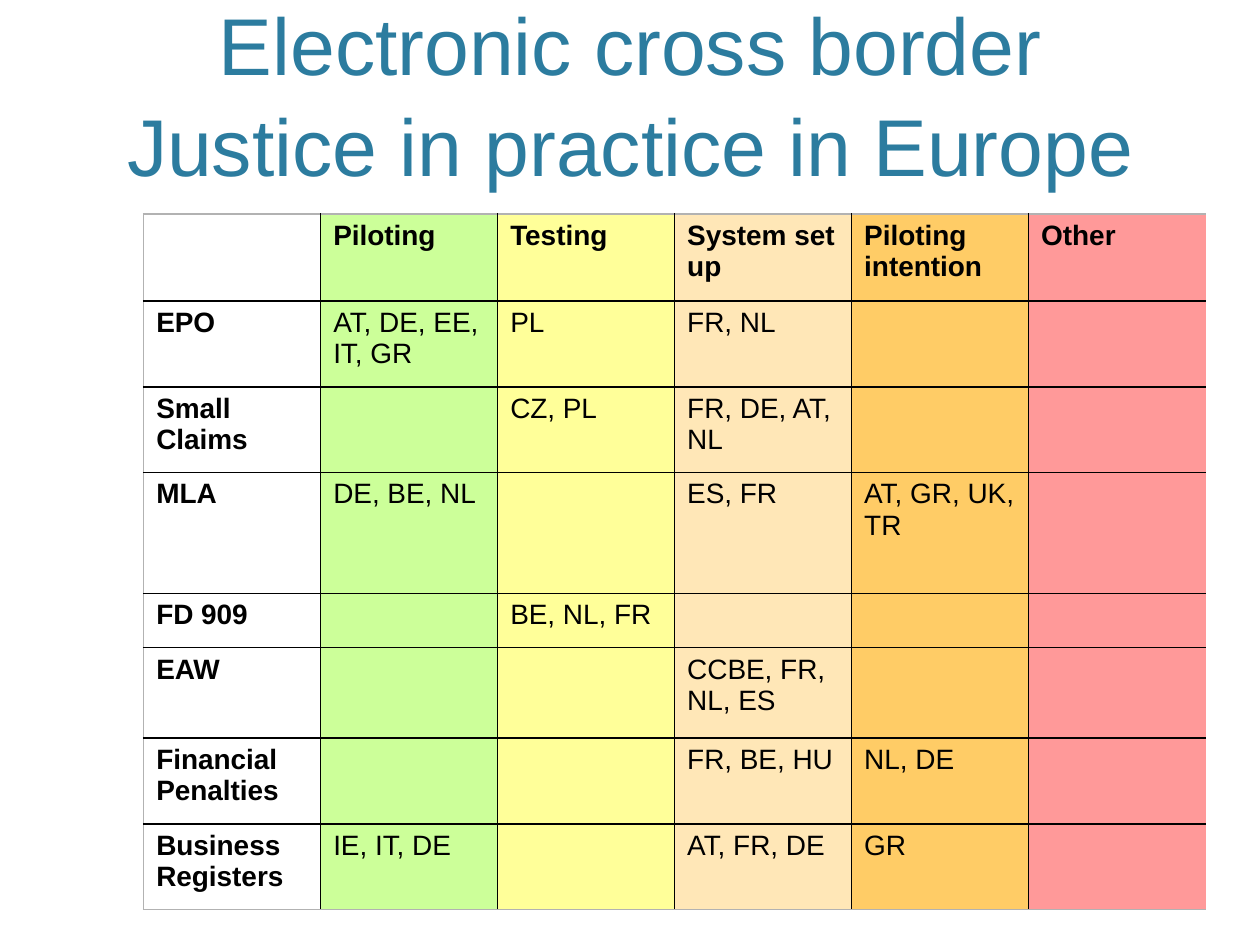
"""Build a slide with a table of cross-border justice pilots in Europe."""
from lxml import etree
from pptx import Presentation
from pptx import util as u
from pptx.dml.color import RGBColor
from pptx.enum import text
from pptx.oxml import ns

TITLE = "Electronic cross border Justice in practice in Europe"
ROWS = [
    (0.69, ["", "Piloting", "Testing", "System set up", "Piloting intention", "Other"]),
    (0.68, ["EPO", "AT, DE, EE, IT, GR", "PL", "FR, NL", "", ""]),
    (0.68, ["Small Claims", "", "CZ, PL", "FR, DE, AT, NL", "", ""]),
    (0.96, ["MLA", "DE, BE, NL", "", "ES, FR", "AT, GR, UK, TR", ""]),
    (0.43, ["FD 909", "", "BE, NL, FR", "", "", ""]),
    (0.72, ["EAW", "", "", "CCBE, FR, NL, ES", "", ""]),
    (0.68, ["Financial Penalties", "", "", "FR, BE, HU", "NL, DE", ""]),
    (0.68, ["Business Registers", "IE, IT, DE", "", "AT, FR, DE", "GR", ""]),
]
BLUE = RGBColor(0x2C, 0x7C, 0x9F)
BLACK = RGBColor(0, 0, 0)
GREY = RGBColor(0xB2, 0xB2, 0xB2)
WHITE = RGBColor(0xFF, 0xFF, 0xFF)
GREEN = RGBColor(0xCC, 0xFF, 0x99)
YELLOW = RGBColor(0xFF, 0xFF, 0x99)
CREAM = RGBColor(0xFF, 0xE7, 0xB7)
ORANGE = RGBColor(0xFF, 0xCC, 0x66)
PINK = RGBColor(0xFF, 0x99, 0x99)
FILLS = [WHITE, GREEN, YELLOW, CREAM, ORANGE, PINK]
HEAD = {"name": "Arial", "size": u.Pt(46), "bold": False}
BODY = {"name": "Arial", "size": u.Pt(16)}
WIDTH = 8.43


def format_font(font, color, values):
    for key, value in values.items():
        setattr(font, key, value)
    font.color.rgb = color


def add_edge(cell, side, color):
    line = etree.SubElement(cell._tc.get_or_add_tcPr(), ns.qn(f"a:ln{side}"), w=str(u.Pt(1)))
    if color is None:
        etree.SubElement(line, ns.qn("a:noFill"))
    else:
        fill = etree.SubElement(line, ns.qn("a:solidFill"))
        etree.SubElement(fill, ns.qn("a:srgbClr"), val=str(color))


def add_title(slide):
    title = slide.shapes.title
    place = {"left": 0.6, "top": 0.12, "width": 8.8, "height": 1.46}
    for key, value in place.items():
        setattr(title, key, u.Inches(value))
    frame = title.text_frame
    frame.text = TITLE
    frame.word_wrap = True
    frame.auto_size = text.MSO_AUTO_SIZE.NONE
    frame.vertical_anchor = text.MSO_ANCHOR.BOTTOM
    para = frame.paragraphs[0]
    para.alignment = text.PP_ALIGN.CENTER
    para.line_spacing = 1.05
    format_font(para.runs[0].font, BLUE, HEAD)


def add_grid(slide):
    high = sum(size for size, _ in ROWS)
    frame = slide.shapes.add_table(
        len(ROWS), len(FILLS), u.Inches(1.14), u.Inches(1.7), u.Inches(WIDTH), u.Inches(high))
    table = frame.table
    table.first_row = table.horz_banding = False
    for col in table.columns:
        col.width = u.Inches(WIDTH / len(FILLS))
    for row, (size, words) in enumerate(ROWS):
        table.rows[row].height = u.Inches(size)
        for col, (word, fill) in enumerate(zip(words, FILLS)):
            cell = table.cell(row, col)
            edges = {
                "L": BLACK if col else GREY,
                "R": BLACK if col < len(FILLS) - 1 else None,
                "T": BLACK if row else GREY,
                "B": BLACK if row < len(ROWS) - 1 else GREY,
            }
            for side, color in edges.items():
                add_edge(cell, side, color)
            cell.fill.solid()
            cell.fill.fore_color.rgb = fill
            if word:
                cell.text = word
                font = cell.text_frame.paragraphs[0].runs[0].font
                format_font(font, BLACK, {**BODY, "bold": row == 0 or col == 0})


def main():
    deck = Presentation()
    deck.slide_width, deck.slide_height = u.Inches(10), u.Inches(7.5)
    slide = deck.slides.add_slide(deck.slide_layouts[5])
    add_title(slide)
    add_grid(slide)
    deck.save("out.pptx")


if __name__ == "__main__":
    main()
